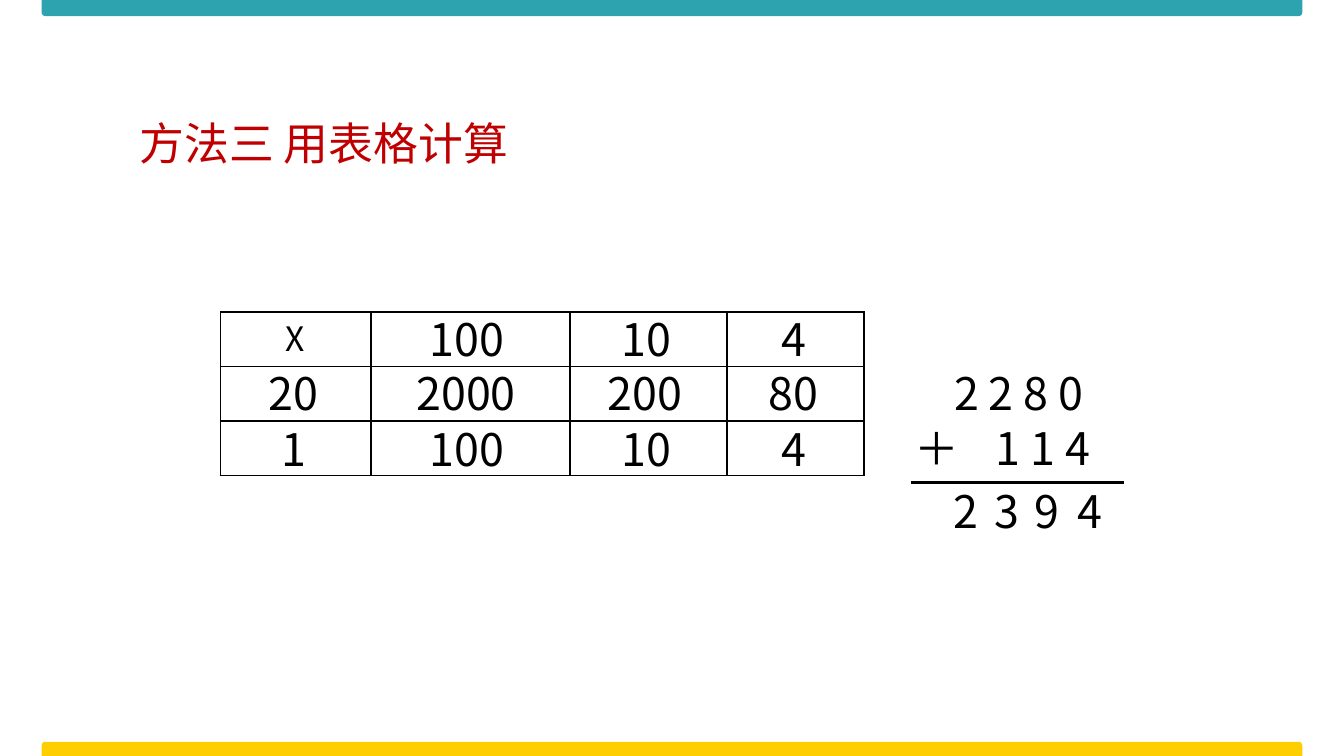
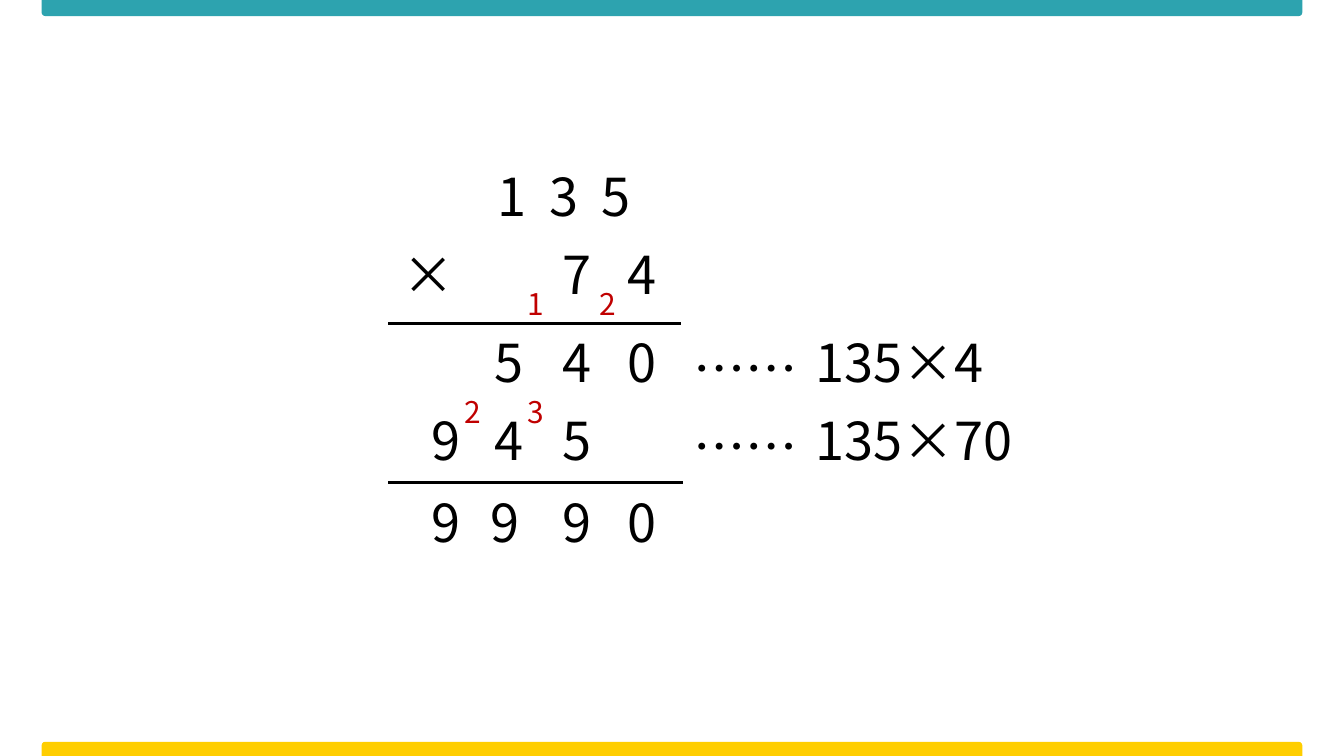
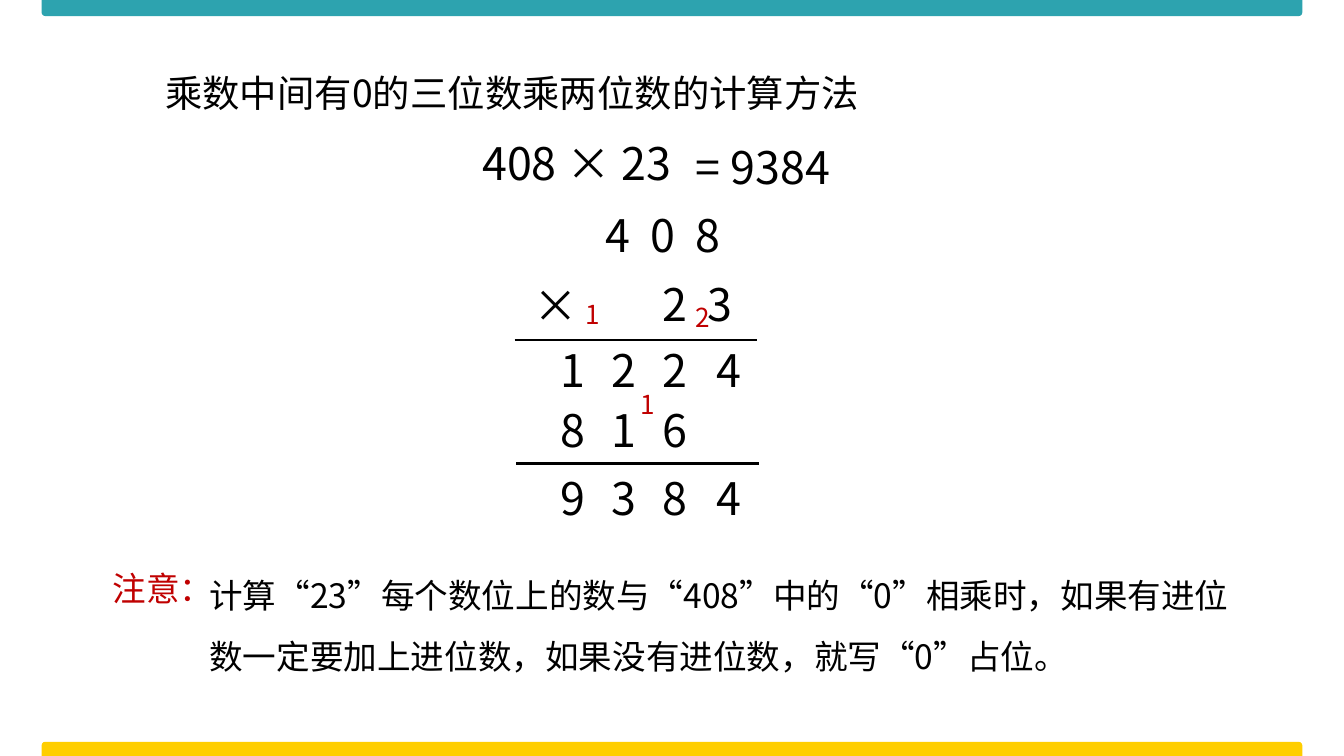
from lxml.etree import SubElement
from pptx import Presentation
from pptx.dml.color import RGBColor
from pptx.enum.shapes import MSO_CONNECTOR as Connector, MSO_SHAPE as Shape
from pptx.enum.text import MSO_AUTO_SIZE as AutoSize
from pptx.oxml.ns import qn
from pptx.util import Inches, Pt

LATIN = "Noto Sans CJK KR"
CHINESE = "Noto Sans CJK SC"
BLACK, RED, TEAL, YELLOW = "000000", "C00000", "2DA3AF", "FFCE00"
LINE_HEIGHT = {14: 0.34, 16: 0.37, 18: 0.4, 20: 0.44, 24: 0.5, 28: 0.57}
DIGIT_WIDTH = {14: 0.32, 16: 0.33, 18: 0.35, 24: 0.4, 28: 0.43}


def color(hex_value):
    return RGBColor.from_string(hex_value)


def format_run(run, size, hex_value, typeface, spacing=0):
    run.font.size = Pt(size)
    run.font.color.rgb = color(hex_value)
    run.font.name = typeface
    properties = run.font._element
    SubElement(properties, qn("a:ea")).set("typeface", typeface)
    if spacing:
        properties.set("spc", str(round(spacing * 100)))


def add_text(slide, parts, left, top, width, size, hex_value=BLACK, typeface=LATIN,
             wrap=False, spacing=0, line_spacing=None, height=None):
    box = slide.shapes.add_textbox(Inches(left), Inches(top), Inches(width),
                                   Inches(height or LINE_HEIGHT[size]))
    frame = box.text_frame
    frame.word_wrap = wrap
    frame.auto_size = AutoSize.SHAPE_TO_FIT_TEXT
    paragraph = frame.paragraphs[0]
    if line_spacing:
        paragraph.line_spacing = line_spacing
    if isinstance(parts, str):
        parts = [(parts, typeface)]
    for text, part_typeface in parts:
        run = paragraph.add_run()
        run.text = text
        format_run(run, size, hex_value, part_typeface, spacing)


def add_digits(slide, digits, lefts, top, size, hex_value=BLACK):
    for digit, left in zip(digits, lefts):
        add_text(slide, digit, left, top, DIGIT_WIDTH[size], size, hex_value)


def add_spaced_number(slide, number, left, top, width, size):
    add_text(slide, number, left, top, width, size, spacing=size * 0.11)


def add_rule(slide, left, right, y):
    rule = slide.shapes.add_connector(Connector.STRAIGHT, Inches(left), Inches(y),
                                      Inches(right), Inches(y))
    rule.line.color.rgb = color(BLACK)
    rule.line.width = Pt(1.5)
    SubElement(rule._element.spPr, qn("a:effectLst"))


def add_band(slide, top, hex_value):
    band = slide.shapes.add_shape(Shape.ROUNDED_RECTANGLE, Inches(0.31), Inches(top),
                                  Inches(9.38), Inches(0.16))
    band.shadow.inherit = False
    band.fill.solid()
    band.fill.fore_color.rgb = color(hex_value)
    band.line.fill.background()


def add_slide(deck):
    slide = deck.slides.add_slide(deck.slide_layouts[6])
    add_band(slide, -0.04, TEAL)
    add_band(slide, 5.52, YELLOW)
    return slide


def format_cell(cell):
    properties = cell._tc.get_or_add_tcPr()
    for side in ("lnL", "lnR", "lnT", "lnB"):
        border = SubElement(properties, qn(f"a:{side}"), w=str(Pt(1)))
        fill = SubElement(border, qn("a:solidFill"))
        SubElement(fill, qn("a:srgbClr"), val=BLACK)
    cell.fill.background()


def add_grid(slide, left, top, widths, row_count, height):
    frame = slide.shapes.add_table(row_count, len(widths), Inches(left), Inches(top),
                                   Inches(sum(widths)), Inches(height))
    grid = frame.table
    grid.first_row = grid.horz_banding = False
    for column, width in zip(grid.columns, widths):
        column.width = Inches(width)
    for row in grid.rows:
        row.height = Inches(height / row_count)
        for cell in row.cells:
            format_cell(cell)


def add_grid_numbers(slide, left, widths, rows):
    for top, numbers in rows:
        edge = left
        for number, column_width in zip(numbers, widths):
            size = 18 if number == "X" else 24
            number_top = top + 0.05 if number == "X" else top
            width = DIGIT_WIDTH[size] + 0.2 * (len(number) - 1)
            add_text(slide, number, edge + (column_width - width) / 2, number_top,
                     width, size)
            edge += column_width


def build_table_method(deck):
    slide = add_slide(deck)
    grid_left, widths = 1.64, [1.12, 1.48, 1.17, 1.02]
    add_grid(slide, grid_left, 2.32, widths, 3, 1.22)
    add_text(slide, "方法三 用表格计算", 0.94, 0.81, 3.06, 24, RED, CHINESE)
    add_grid_numbers(slide, grid_left, widths, [
        (2.27, ["X", "100", "10", "4"]),
        (2.67, ["20", "2000", "200", "80"]),
        (3.09, ["1", "100", "10", "4"]),
    ])
    add_text(slide, "2 2 8 0", 7, 2.67, 1.32, 24)
    add_text(slide, "1 1 4", 7.31, 3.08, 1.02, 24)
    add_text(slide, "＋", 6.71, 3.08, 0.54, 24)
    add_rule(slide, 6.78, 8.36, 3.59)
    add_digits(slide, "2394", [7, 7.3, 7.6, 7.92], 3.55, 24)


def build_column_method(deck):
    slide = add_slide(deck)
    places = [3.11, 3.58, 4.09, 4.57]
    add_spaced_number(slide, "1 3 5", 3.6, 1.17, 1.42, 28)
    add_text(slide, "×", 2.9, 1.75, 0.59, 28)
    add_digits(slide, "74", places[2:], 1.75, 28)
    add_digits(slide, "12", [3.83, 4.36], 2.08, 16, RED)
    add_rule(slide, 2.89, 5.07, 2.41)
    add_digits(slide, "540", places[1:], 2.41, 28)
    add_digits(slide, "23", [3.36, 3.83], 2.88, 16, RED)
    add_digits(slide, "945", places, 2.99, 28)
    add_rule(slide, 2.89, 5.08, 3.59)
    add_digits(slide, "9990", [3.11, 3.55, 4.09, 4.57], 3.6, 28)
    for product, top, width in [("135×4", 2.41, 1.58), ("135×70", 2.99, 1.68)]:
        add_text(slide, product, 5.97, top, width, 28)
        add_text(slide, "……", 5.06, top + 0.04, 0.99, 28, typeface=CHINESE)


def build_zero_method(deck):
    slide = add_slide(deck)
    places = [4.07, 4.45, 4.83, 5.23]
    add_text(slide, [("乘数中间有", CHINESE), ("0", LATIN),
                     ("的三位数乘两位数的计算方法", CHINESE)],
             1.13, 0.47, 5.41, 20, wrap=True)
    add_text(slide, "408 × 23", 3.49, 0.96, 1.8, 24)
    add_text(slide, "= 9384", 5.08, 0.99, 1.3, 24)
    add_spaced_number(slide, "4 0 8", 4.41, 1.5, 1.24, 24)
    add_text(slide, "×", 3.87, 2.02, 0.53, 24)
    add_spaced_number(slide, "2 3", 4.83, 2.01, 0.82, 24)
    add_digits(slide, "1", [4.26], 2.17, 14, RED)
    add_digits(slide, "2", [5.08], 2.19, 14, RED)
    add_rule(slide, 3.83, 5.63, 2.53)
    add_digits(slide, "1224", places, 2.5, 24)
    add_digits(slide, "1", [4.67], 2.84, 14, RED)
    add_digits(slide, "816", places, 2.95, 24)
    add_rule(slide, 3.84, 5.65, 3.45)
    add_digits(slide, "9384", places, 3.45, 24)
    add_text(slide, [
        ("计算“", CHINESE), ("23", LATIN), ("”每个数位上的数与“", CHINESE),
        ("408", LATIN), ("”中的“", CHINESE), ("0", LATIN),
        ("”相乘时，如果有进位数一定要加上进位数，如果没有进位数，就写“", CHINESE),
        ("0", LATIN), ("”占位。", CHINESE),
    ], 1.46, 4.08, 7.8, 18, wrap=True, line_spacing=1.5, height=1.01)
    add_text(slide, "注意：", 0.74, 4.18, 0.78, 18, RED, CHINESE, wrap=True)


def main():
    deck = Presentation()
    deck.slide_width = Inches(10)
    deck.slide_height = deck.slide_width * 9 // 16
    build_table_method(deck)
    build_column_method(deck)
    build_zero_method(deck)
    deck.save("out.pptx")


if __name__ == "__main__":
    main()
